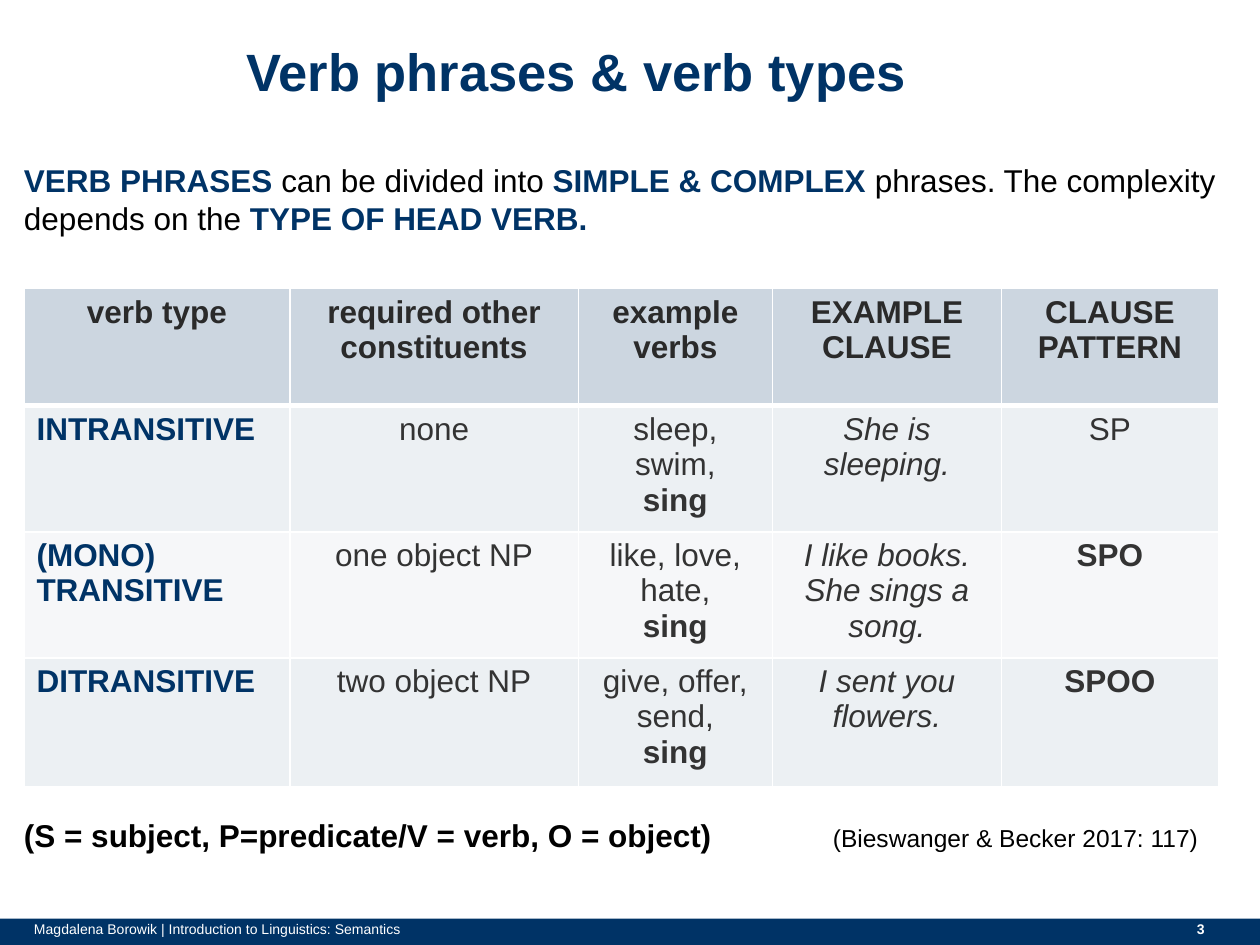
from lxml import etree
from pptx import Presentation
from pptx.dml.color import RGBColor
from pptx.enum.shapes import MSO_SHAPE
from pptx.enum.text import MSO_ANCHOR, PP_ALIGN
from pptx.oxml.ns import qn
from pptx.util import Inches, Pt

LEFT, CENTER, RIGHT = PP_ALIGN.LEFT, PP_ALIGN.CENTER, PP_ALIGN.RIGHT
TOP, MIDDLE = MSO_ANCHOR.TOP, MSO_ANCHOR.MIDDLE
RECTANGLE = MSO_SHAPE.RECTANGLE
NAVY, BLACK, WHITE = "003366", "000000", "FFFFFF"
COLUMN = ROW = Inches(0.1)  # the slide is a grid of 100 columns by 75 rows


def add_run(paragraph, text, size, color, bold=False, italic=False):
    run = paragraph.add_run()
    run.text = text
    run.font.name = "Arial"
    run.font.size = Pt(size)
    run.font.bold = bold
    run.font.italic = italic
    run.font.color.rgb = RGBColor.from_string(color)


def add_text(slide, left, top, width, height, runs, align=LEFT, anchor=TOP, spacing=1.0):
    box = slide.shapes.add_textbox(
        int(left * COLUMN), int(top * ROW), int(width * COLUMN), int(height * ROW))
    frame = box.text_frame
    frame.word_wrap = True
    frame.vertical_anchor = anchor
    frame.margin_left = frame.margin_right = frame.margin_top = frame.margin_bottom = 0
    paragraph = frame.paragraphs[0]
    paragraph.alignment = align
    paragraph.line_spacing = spacing
    for run in runs:
        add_run(paragraph, *run)
    return paragraph


presentation = Presentation()
presentation.slide_width = 100 * COLUMN
presentation.slide_height = 75 * ROW
slide = presentation.slides.add_slide(presentation.slide_layouts[6])

# Footer bar, footer text and slide number
bar = slide.shapes.add_shape(RECTANGLE, 0, int(72.9 * ROW), 100 * COLUMN, int(2.1 * ROW))
bar.shadow.inherit = False
bar.fill.solid()
bar.fill.fore_color.rgb = RGBColor.from_string(NAVY)
bar.line.fill.background()
add_text(slide, 2.7, 72.5, 65.4, 2.5,
         [("Magdalena Borowik | Introduction to Linguistics: Semantics", 8, WHITE)],
         anchor=MIDDLE)
add_text(slide, 83.2, 72.4, 12.4, 2.6, [("3", 8, WHITE, True)], RIGHT, MIDDLE)

# Title and introduction
add_text(slide, -1.5, 3.9, 94.5, 7.7,
         [("Verb phrases & verb types", 30, NAVY, True)], CENTER, spacing=0.85)
add_text(slide, 1.9, 12.7, 96.9, 7, [
    ("VERB PHRASES ", 18, NAVY, True),
    ("can be divided into ", 18, BLACK),
    ("SIMPLE & COMPLEX ", 18, NAVY, True),
    ("phrases. The complexity depends on the ", 18, BLACK),
    ("TYPE OF HEAD VERB.", 18, NAVY, True),
], spacing=1.02)

# Table: each cell lists its paragraphs, a leading * marks a bold one
rows = [
    (["verb type"], ["required other constituents"], ["example verbs"],
     ["EXAMPLE CLAUSE"], ["CLAUSE PATTERN"]),
    (["INTRANSITIVE"], ["none"], ["sleep,", "swim,", "*sing"],
     ["She is sleeping."], ["SP"]),
    (["(MONO)", "TRANSITIVE"], ["one object NP"], ["like, love,", "hate,", "*sing"],
     ["I like books.", "She sings a song."], ["*SPO"]),
    (["DITRANSITIVE"], ["two object NP"], ["give, offer, send,", "*sing"],
     ["I sent you flowers."], ["*SPOO"]),
]
column_widths = [21.1, 22.9, 15.4, 18.2, 17.2]
row_heights = [9.3, 9.3, 9.3, 10.2]
row_fills = ["CCD6E0", "ECF0F3", "F6F7F9", "ECF0F3"]
EXAMPLE_CLAUSE = 3

table_frame = slide.shapes.add_table(
    len(rows), len(column_widths), int(1.9 * COLUMN), int(22.9 * ROW),
    int(sum(column_widths) * COLUMN), int(sum(row_heights) * ROW))
table = table_frame.table
for column, width in zip(table.columns, column_widths):
    column.width = int(width * COLUMN)
for row, height in zip(table.rows, row_heights):
    row.height = int(height * ROW)

for row_index, row_cells in enumerate(rows):
    header = row_index == 0
    for column_index, lines in enumerate(row_cells):
        cell = table.cell(row_index, column_index)
        row_label = column_index == 0 and not header

        # White borders, thicker around the lower edge of the header
        properties = cell._tc.get_or_add_tcPr()
        for side in ("L", "R", "T", "B"):
            thick = (side == "B" and header) or (side == "T" and row_index == 1)
            border = etree.SubElement(
                properties, qn("a:ln" + side), w=str(Pt(3 if thick else 1)))
            border_fill = etree.SubElement(border, qn("a:solidFill"))
            etree.SubElement(border_fill, qn("a:srgbClr"), val=WHITE)
        cell.fill.solid()
        cell.fill.fore_color.rgb = RGBColor.from_string(row_fills[row_index])

        color = "2A2A2A" if header else NAVY if row_label else "333333"
        for line_index, line in enumerate(lines):
            frame = cell.text_frame
            paragraph = frame.add_paragraph() if line_index else frame.paragraphs[0]
            paragraph.alignment = LEFT if row_label else CENTER
            add_run(paragraph, line.lstrip("*"), 18, color,
                    bold=header or row_label or line.startswith("*"),
                    italic=column_index == EXAMPLE_CLAUSE and not header)

# Key to the abbreviations, with the citation at a tab stop
key = add_text(slide, 1.9, 64.7, 96.9, 3.2, [
    ("(S = subject, P=predicate/V = verb, O = object)\t", 18, BLACK, True),
    ("(Bieswanger & Becker 2017: 117)", 14, BLACK),
], spacing=1.02)
tab_stops = etree.SubElement(key._p.get_or_add_pPr(), qn("a:tabLst"))
etree.SubElement(tab_stops, qn("a:tab"), pos=str(int(64.2 * COLUMN)), algn="l")

presentation.save("out.pptx")
